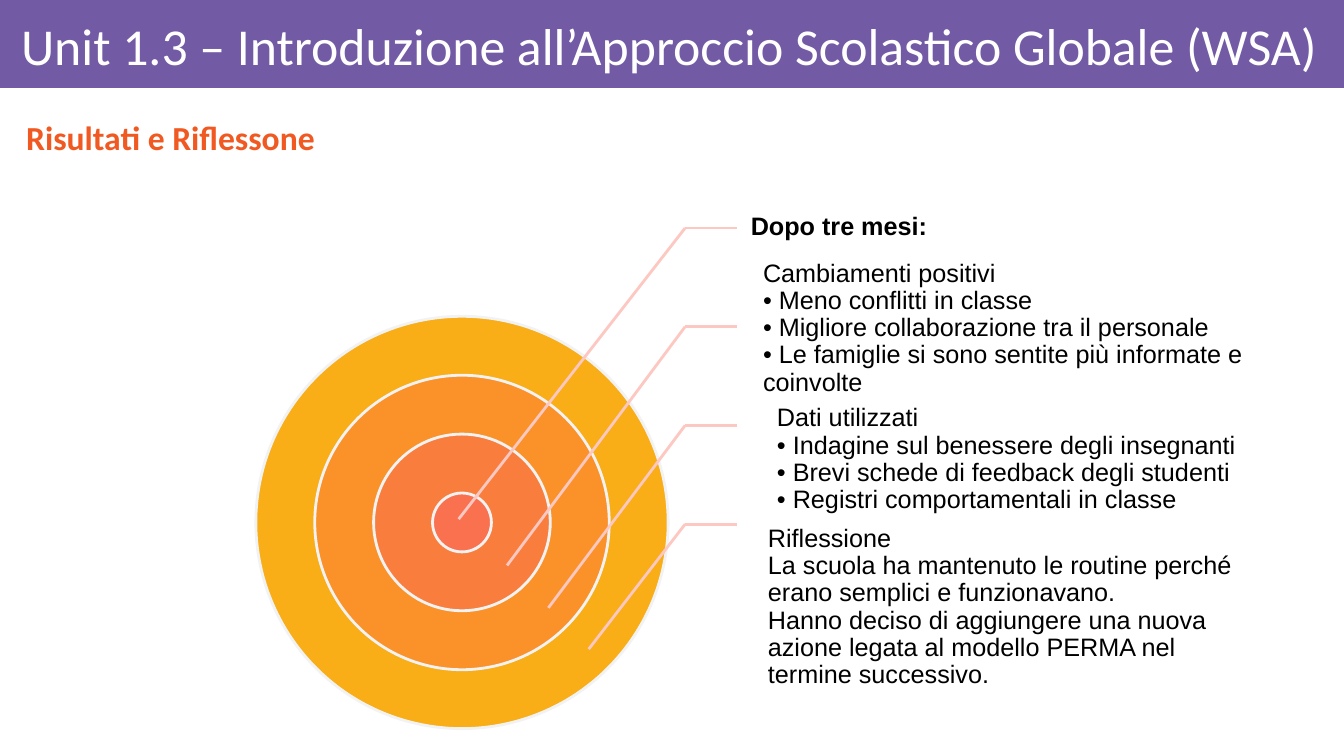
from dataclasses import dataclass

from lxml import etree
from pptx import Presentation
from pptx import util as u
from pptx.dml.color import RGBColor
from pptx.enum import shapes, text
from pptx.oxml import ns


@dataclass(frozen=True)
class Theme:
    band: str = "735AA5"
    white: str = "FFFFFF"
    accent: str = "F05A22"
    ink: str = "000000"
    edge: str = "F2F2F2"
    lead: str = "FDC8C1"
    rings: tuple = ("F9AD16", "FA9229", "F97E3D", "FA7150")
    head: str = "Calibri"
    body: str = "Arial"
    title: int = 37
    sub: int = 24
    note: int = 18
    line: int = 2


class Deck:
    def __init__(self, theme):
        self.theme = theme
        self.prs = Presentation()
        self.prs.slide_width, self.prs.slide_height = u.Pt(960), u.Pt(540)
        self.slide = self.prs.slides.add_slide(self.prs.slide_layouts[6])

    def shape(self, kind, box, fill, edge=None):
        item = self.slide.shapes.add_shape(kind, *map(u.Pt, box))
        item.shadow.inherit = False
        item.fill.solid()
        item.fill.fore_color.rgb = RGBColor.from_string(fill)
        if edge:
            self.stroke(item.line, edge)
        else:
            item.line.fill.background()

    def stroke(self, line, color):
        line.color.rgb = RGBColor.from_string(color)
        line.width = u.Pt(self.theme.line)

    def link(self, start, end):
        item = self.slide.shapes.add_connector(
            shapes.MSO_CONNECTOR.STRAIGHT, *map(u.Pt, (*start, *end)))
        self.stroke(item.line, self.theme.lead)
        etree.SubElement(item.element.spPr, ns.qn("a:effectLst"))

    def label(self, box, words, font, size, color, pad, bold=False, align=None):
        """Place middle-anchored text; pad is left, top, right, bottom."""
        frame = self.slide.shapes.add_textbox(*map(u.Pt, box)).text_frame
        frame.word_wrap = True
        frame.vertical_anchor = text.MSO_ANCHOR.MIDDLE
        (frame.margin_left, frame.margin_top,
         frame.margin_right, frame.margin_bottom) = map(u.Pt, pad)
        frame.text = words
        for para in frame.paragraphs:
            para.line_spacing = 0.9
            para.alignment = align
            for run in para.runs:
                run.font.name = font
                run.font.size = u.Pt(size)
                run.font.bold = bold
                run.font.color.rgb = RGBColor.from_string(color)


NOTES = (
    ((526.3, 127.4, 147, 70.6), True, "Dopo tre mesi:"),
    ((535, 199.4, 360.7, 70.6), False,
     "Cambiamenti positivi\n"
     "• Meno conflitti in classe\n"
     "• Migliore collaborazione tra il personale\n"
     "• Le famiglie si sono sentite più informate e coinvolte"),
    ((545, 293, 360.7, 70.6), False,
     "Dati utilizzati\n"
     "• Indagine sul benessere degli insegnanti\n"
     "• Brevi schede di feedback degli studenti\n"
     "• Registri comportamentali in classe"),
    ((538.5, 370.8, 350, 126), False,
     "Riflessione\n"
     "La scuola ha mantenuto le routine perché erano semplici e funzionavano.\n"
     "Hanno deciso di aggiungere una nuova azione legata al modello PERMA "
     "nel termine successivo."),
)
TIPS = ((327.6, 370.8), (362.2, 403.9), (391.7, 434.2), (420.5, 463.7))


def main():
    look = Theme()
    deck = Deck(look)
    deck.shape(shapes.MSO_SHAPE.RECTANGLE, (0, 0, 960, 62.8), look.band)
    deck.label((8, 6.5, 940.3, 56.2),
               "Unit 1.3 – Introduzione all’Approccio Scolastico Globale (WSA)",
               look.head, look.title, look.white, (7.2, 4.3, 4.3, 4.3))
    deck.label((-6.5, 77.8, 940.3, 43.2), "Risultati e Riflessone",
               look.head, look.sub, look.accent, (25.2, 3.6, 7.2, 3.6),
               bold=True, align=text.PP_ALIGN.JUSTIFY)

    mid_x, mid_y, core = 330, 373.2, 42.07
    for rank, color in enumerate(look.rings):
        size = core * (7 - 2 * rank)
        deck.shape(shapes.MSO_SHAPE.OVAL,
                   (mid_x - size / 2, mid_y - size / 2, size, size),
                   color, look.edge)

    bend, stop, top, step = 489.4, 526.3, 162.9, 70.5
    for rank, ((box, bold, words), tip) in enumerate(zip(NOTES, TIPS)):
        level = top + rank * step
        deck.label(box, words, look.body, look.note, look.ink,
                   (10, 1.6, 1.6, 1.6), bold)
        deck.link((bend, level), (stop, level))
        deck.link((bend, level), tip)

    deck.prs.save("out.pptx")


if __name__ == "__main__":
    main()
